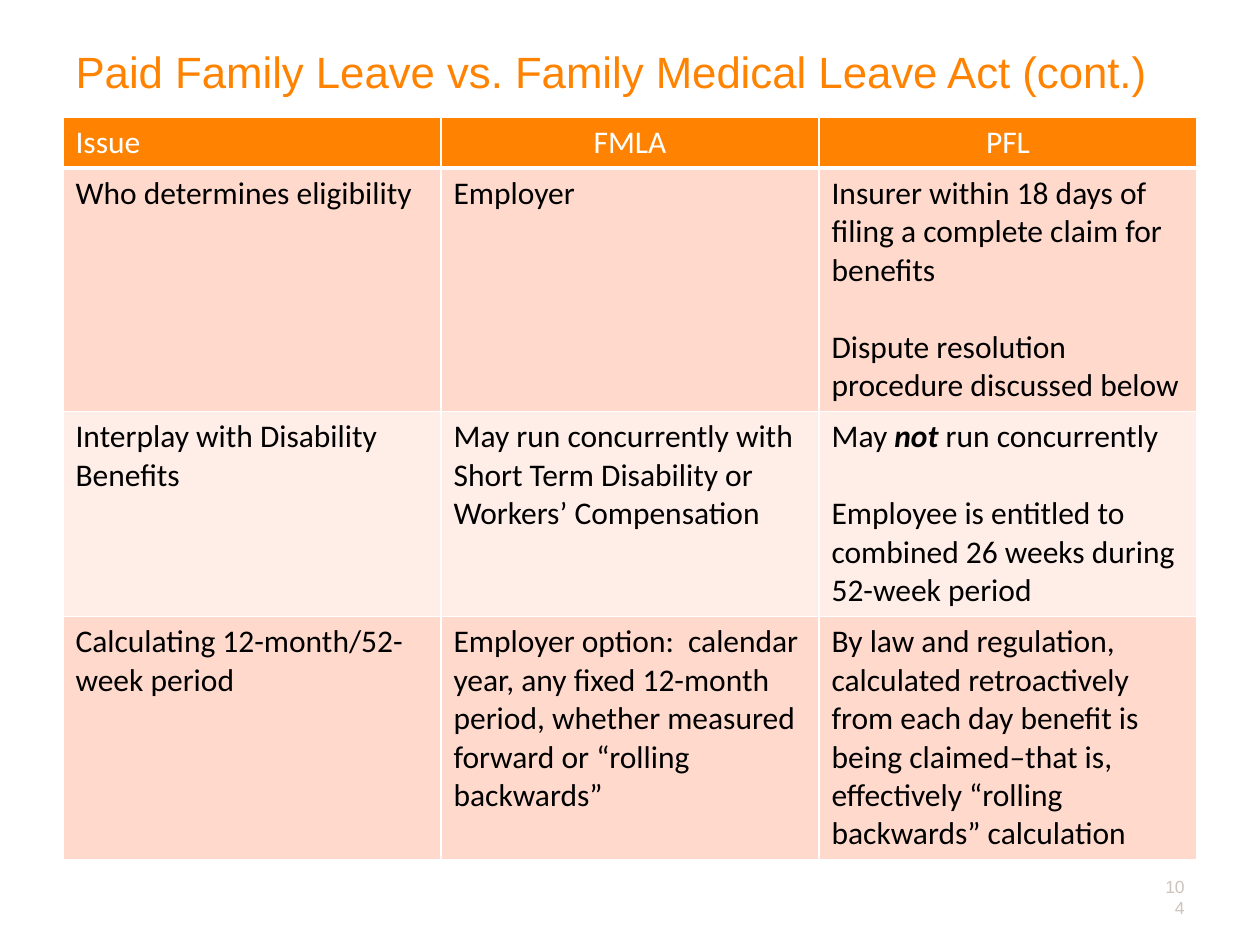
import pptx
import pptx.dml.color
import pptx.enum.text
import pptx.oxml
import pptx.oxml.ns
import pptx.util
import lxml.etree

SCALE = 914400 / 126  # EMU per px
COLORS = {
    "orange": "FF8300",
    "band_dark": "FFD9CC",
    "band_light": "FFEDE7",
    "text": "000000",
    "white": "FFFFFF",
    "number": "CDC3BB",
}
ALIGN = pptx.enum.text.PP_ALIGN
ANCHOR = pptx.enum.text.MSO_ANCHOR

# Each cell is a list of paragraphs; each paragraph is a list of runs
HEADERS = ["Issue", "FMLA", "PFL"]
BODY = [
    [
        [["Who determines eligibility"]],
        [["Employer"]],
        [["Insurer within 18 days of filing a complete claim for benefits"],
         ["Dispute resolution procedure discussed below"]],
    ],
    [
        [["Interplay with Disability Benefits"]],
        [["May run concurrently with Short Term Disability or Workers’ Compensation"]],
        [["May ", "not ", "run concurrently"],
         ["Employee is entitled to combined 26 weeks during 52-week period"]],
    ],
    [
        [["Calculating 12-month/52-week period"]],
        [["Employer option:  calendar year, any fixed 12-month period, "
          "whether measured forward or “rolling backwards”"]],
        [["By law and regulation, calculated retroactively from each day benefit is "
          "being claimed–that is, effectively “rolling backwards” calculation"]],
    ],
]
ROW_HEIGHTS = [51, 243, 205, 243]
EMPHASIS = "not "


def px(n):
    return pptx.util.Emu(round(n * SCALE))


def rgb(name):
    return pptx.dml.color.RGBColor.from_string(COLORS[name])


def format_run(r, font, size, color):
    r.font.name = font
    r.font.size = pptx.util.Pt(size)
    r.font.color.rgb = rgb(color)


def place(shape, box):
    shape.left, shape.top, shape.width, shape.height = map(px, box)


def add_title(s, box):
    title = s.shapes.title
    place(title, box)
    tf = title.text_frame
    tf.text = "Paid Family Leave vs. Family Medical Leave Act (cont.)"
    tf.word_wrap = True
    tf.auto_size = pptx.enum.text.MSO_AUTO_SIZE.NONE
    tf.vertical_anchor = ANCHOR.TOP
    p = tf.paragraphs[0]
    p.alignment = ALIGN.LEFT
    format_run(p.runs[0], "Arial", 25, "orange")


def set_borders(cell, bottom):
    tc_pr = cell._tc.get_or_add_tcPr()
    widths = {"lnL": 1, "lnR": 1, "lnT": 1, "lnB": bottom}
    for i, (tag, width) in enumerate(widths.items()):
        ln = lxml.etree.Element(pptx.oxml.ns.qn("a:" + tag), w=str(pptx.util.Pt(width)))
        fill = lxml.etree.SubElement(ln, pptx.oxml.ns.qn("a:solidFill"))
        lxml.etree.SubElement(fill, pptx.oxml.ns.qn("a:srgbClr"), val=COLORS["white"])
        tc_pr.insert(i, ln)


def fill_cell(cell, paragraphs, fill, color, align=ALIGN.LEFT, bottom=1):
    cell.fill.solid()
    cell.fill.fore_color.rgb = rgb(fill)
    set_borders(cell, bottom)
    tf = cell.text_frame
    for i, runs in enumerate(paragraphs):
        p = tf.add_paragraph() if i else tf.paragraphs[0]
        p.alignment = align
        if i:
            p.space_before = pptx.util.Pt(22)  # one line of space
        for text in runs:
            r = p.add_run()
            r.text = text
            format_run(r, "Calibri", 18, color)
            if text == EMPHASIS:
                r.font.bold = r.font.italic = True


def add_comparison_table(s, box):
    table = s.shapes.add_table(len(BODY) + 1, len(HEADERS), *map(px, box)).table
    for col in table.columns:
        col.width = px(box[2] // len(HEADERS))
    for row, height in zip(table.rows, ROW_HEIGHTS):
        row.height = px(height)

    # Header row
    for c, text in enumerate(HEADERS):
        align = ALIGN.CENTER if c else ALIGN.LEFT
        fill_cell(table.cell(0, c), [[text]], "orange", "white", align, bottom=3)

    # Banded body rows
    for i, row in enumerate(BODY):
        band = "band_light" if i % 2 else "band_dark"
        for c, paragraphs in enumerate(row):
            fill_cell(table.cell(i + 1, c), paragraphs, band, "text")


def add_page_number(s, box):
    tf = s.shapes.add_textbox(*map(px, box)).text_frame
    tf.text = "104"
    tf.word_wrap = True
    tf.vertical_anchor = ANCHOR.MIDDLE
    p = tf.paragraphs[0]
    p.alignment = ALIGN.RIGHT
    format_run(p.runs[0], "Arial", 10, "number")


def main():
    prs = pptx.Presentation()
    prs.slide_width, prs.slide_height = px(1260), px(945)
    s = prs.slides.add_slide(prs.slide_layouts[5])  # title only
    add_title(s, (63, 38, 1134, 158))
    add_comparison_table(s, (63, 117, 1134, sum(ROW_HEIGHTS)))
    add_page_number(s, (1144, 872, 53, 50))
    prs.save("out.pptx")


if __name__ == "__main__":
    main()
